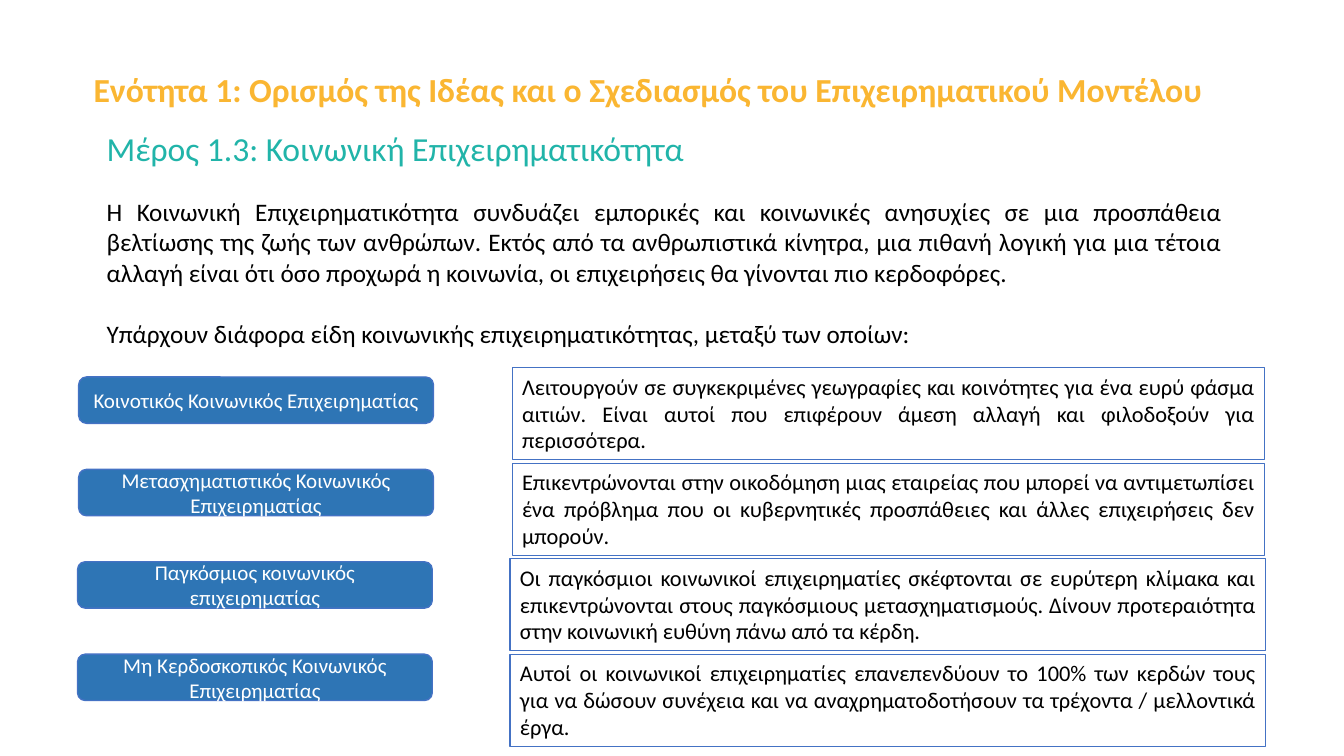
from dataclasses import dataclass

from pptx import Presentation
from pptx.dml.color import RGBColor
from pptx.enum.shapes import MSO_SHAPE
from pptx.enum.text import MSO_ANCHOR, PP_ALIGN
from pptx.util import Pt


@dataclass(frozen=True)
class Theme:
    """Colours, font and type sizes of the slide."""

    font: str = "Calibri"
    amber: str = "FAB632"
    teal: str = "21B4A9"
    black: str = "000000"
    white: str = "FFFFFF"
    blue: str = "2E75B5"
    outline: str = "4472C4"
    heading: float = 24
    body: float = 18
    description: float = 16
    label: float = 15


class SlideBuilder:
    """Holds the theme and the current slide, and adds elements to it."""

    def __init__(self, page, theme):
        """Keep the slide and its style."""
        self.page = page
        self.theme = theme

    def apply(self, target, formats):
        """Set every attribute named in a dict of format values."""
        for name, value in formats.items():
            setattr(target, name, value)

    def add_paragraphs(self, shape, paragraphs, size, color, bold=False,
                       anchor=MSO_ANCHOR.TOP, **layout):
        """Fill a shape with evenly styled paragraphs."""
        frame = shape.text_frame
        self.apply(frame, {
            "word_wrap": True, "vertical_anchor": anchor,
            "margin_left": Pt(7.2), "margin_right": Pt(7.2),
            "margin_top": Pt(3.6), "margin_bottom": Pt(3.6),
        })
        for index, text in enumerate(paragraphs):
            para = frame.add_paragraph() if index else frame.paragraphs[0]
            self.apply(para, layout)
            span = para.add_run()
            span.text = text
            self.apply(span.font, {"name": self.theme.font, "size": Pt(size), "bold": bold})
            span.font.color.rgb = RGBColor.from_string(color)

    def text(self, area, paragraphs, size, color, **formats):
        """Add a plain text box."""
        box = self.page.shapes.add_textbox(*map(Pt, area))
        self.add_paragraphs(box, paragraphs, size, color, **formats)

    def panel(self, kind, area, line_width, fill=None):
        """Add an outlined shape, filled when a colour is given."""
        shape = self.page.shapes.add_shape(kind, *map(Pt, area))
        shape.shadow.inherit = False
        if fill:
            shape.fill.solid()
            shape.fill.fore_color.rgb = RGBColor.from_string(fill)
        else:
            shape.fill.background()
        shape.line.color.rgb = RGBColor.from_string(self.theme.outline)
        shape.line.width = Pt(line_width)
        return shape

    def label(self, area, text):
        """Add a rounded blue label."""
        shape = self.panel(MSO_SHAPE.ROUNDED_RECTANGLE, area, 1, self.theme.blue)
        self.add_paragraphs(shape, [text], self.theme.label, self.theme.white,
                            anchor=MSO_ANCHOR.MIDDLE, alignment=PP_ALIGN.CENTER)

    def description(self, area, text):
        """Add an outlined box with justified text."""
        shape = self.panel(MSO_SHAPE.RECTANGLE, area, 0.75)
        self.add_paragraphs(shape, [text], self.theme.description, self.theme.black,
                            alignment=PP_ALIGN.JUSTIFY)


INTRODUCTION = [
    "Η Κοινωνική Επιχειρηματικότητα συνδυάζει εμπορικές και κοινωνικές ανησυχίες σε μια "
    "προσπάθεια βελτίωσης της ζωής των ανθρώπων. Εκτός από τα ανθρωπιστικά κίνητρα, μια "
    "πιθανή λογική για μια τέτοια αλλαγή είναι ότι όσο προχωρά η κοινωνία, οι επιχειρήσεις "
    "θα γίνονται πιο κερδοφόρες.",
    "Υπάρχουν διάφορα είδη κοινωνικής επιχειρηματικότητας, μεταξύ των οποίων:",
]

WIDE = (364.3, 540)
NARROW = (365.8, 537.8)

ENTREPRENEURS = [
    (56.2, NARROW, "Κοινοτικός Κοινωνικός Επιχειρηματίας",
     "Λειτουργούν σε συγκεκριμένες γεωγραφίες και κοινότητες για ένα ευρύ φάσμα αιτιών. "
     "Είναι αυτοί που επιφέρουν άμεση αλλαγή και φιλοδοξούν για περισσότερα."),
    (56.2, NARROW, "Μετασχηματιστικός Κοινωνικός Επιχειρηματίας",
     "Επικεντρώνονται στην οικοδόμηση μιας εταιρείας που μπορεί να αντιμετωπίσει ένα πρόβλημα "
     "που οι κυβερνητικές προσπάθειες και άλλες επιχειρήσεις δεν μπορούν."),
    (55.4, WIDE, "Παγκόσμιος κοινωνικός επιχειρηματίας",
     "Οι παγκόσμιοι κοινωνικοί επιχειρηματίες σκέφτονται σε ευρύτερη κλίμακα και "
     "επικεντρώνονται στους παγκόσμιους μετασχηματισμούς. Δίνουν προτεραιότητα στην "
     "κοινωνική ευθύνη πάνω από τα κέρδη."),
    (55.4, WIDE, "Μη Κερδοσκοπικός Κοινωνικός Επιχειρηματίας",
     "Αυτοί οι κοινωνικοί επιχειρηματίες επανεπενδύουν το 100% των κερδών τους για να δώσουν "
     "συνέχεια και να αναχρηματοδοτήσουν τα τρέχοντα / μελλοντικά έργα."),
]


def main():
    """Build the slide and save the deck."""
    deck = Presentation()
    deck.slide_width, deck.slide_height = Pt(960), Pt(540)
    theme = Theme()
    builder = SlideBuilder(deck.slides.add_slide(deck.slide_layouts[6]), theme)

    builder.text((59.8, 45.4, 810.7, 36),
                 ["Ενότητα 1: Ορισμός της Ιδέας και ο Σχεδιασμός του Επιχειρηματικού Μοντέλου"],
                 theme.heading, theme.amber, bold=True)
    builder.text((69.1, 87.8, 605.5, 36), ["Μέρος 1.3: Κοινωνική Επιχειρηματικότητα"],
                 theme.heading, theme.teal)
    builder.text((69.1, 136.8, 810.7, 116.6), INTRODUCTION, theme.body, theme.black,
                 alignment=PP_ALIGN.JUSTIFY, space_after=Pt(22))

    for row, (label_left, (left, width), name, description) in enumerate(ENTREPRENEURS):
        builder.label((label_left, 269.3 + 66 * row, 253.4, 33.1), name)
        builder.description((left, 262.8 + 68.2 * row, width, 65.5), description)

    deck.save("out.pptx")


if __name__ == "__main__":
    main()
